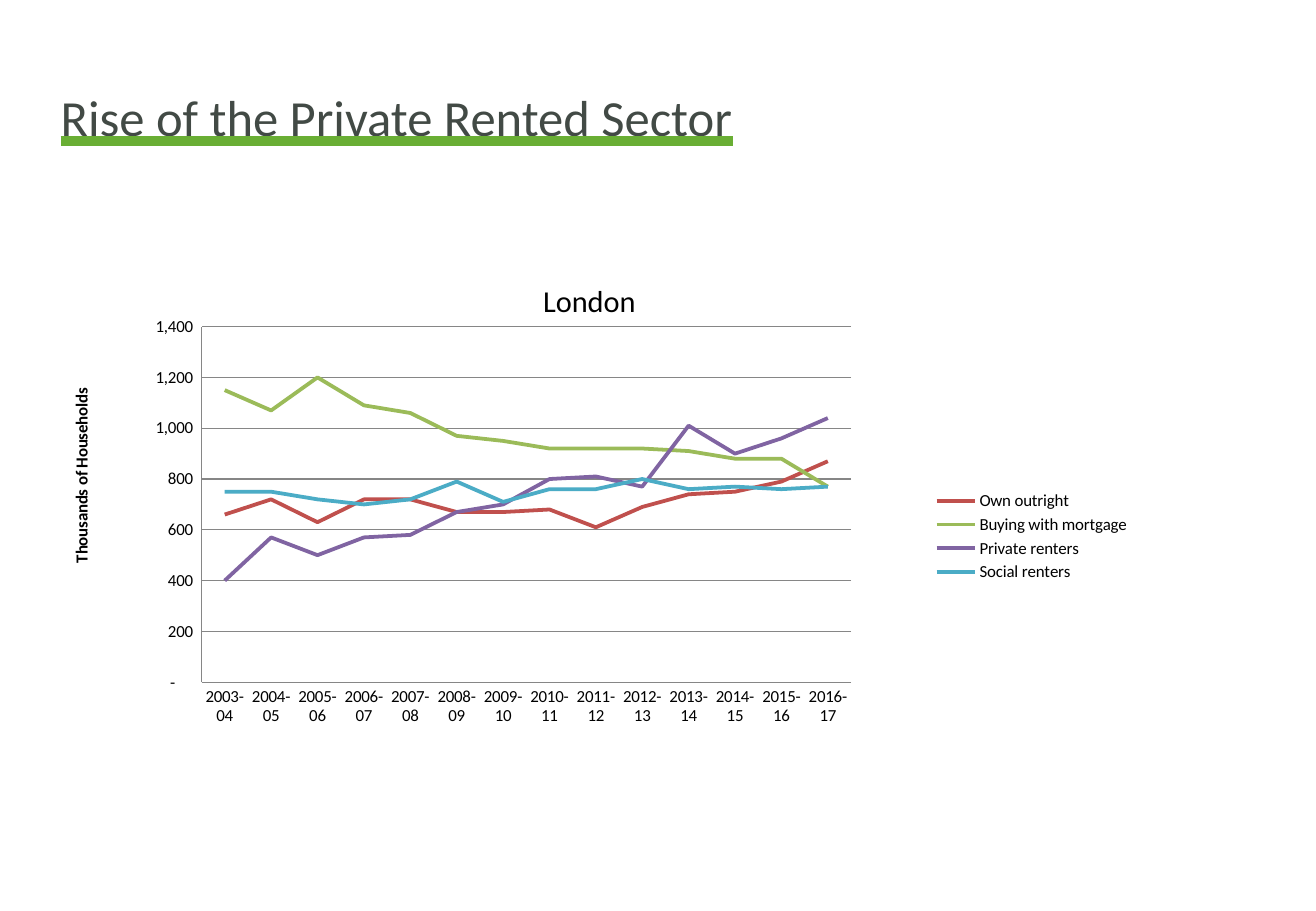
from dataclasses import dataclass

from lxml.etree import SubElement
from pptx import Presentation
from pptx.chart.data import CategoryChartData
from pptx.dml.color import RGBColor
from pptx.enum.chart import XL_CHART_TYPE, XL_LEGEND_POSITION, XL_TICK_MARK
from pptx.enum.text import MSO_ANCHOR, MSO_UNDERLINE
from pptx.oxml import parse_xml
from pptx.oxml.ns import nsdecls, qn
from pptx.util import Inches, Pt

WIDE, HIGH = Inches(10.83), Inches(7.5)
BLACK = RGBColor(0, 0, 0)
SLATE = RGBColor(0x42, 0x4A, 0x45)
LEAF = RGBColor(0x69, 0xAE, 0x34)
GREY = RGBColor(0x86, 0x86, 0x86)
RED = RGBColor(0xC0, 0x50, 0x4D)
GREEN = RGBColor(0x9B, 0xBB, 0x59)
PURPLE = RGBColor(0x80, 0x64, 0xA2)
BLUE = RGBColor(0x4B, 0xAC, 0xC6)
FACE = "Calibri"
COMMAS = '_-* #,##0_-;\\-* #,##0_-;_-* "-"??_-;_-@_-'


@dataclass(frozen=True)
class Box:
    left: float
    top: float
    width: float
    height: float

    def place(self) -> tuple[int, int, int, int]:
        return (int(self.left * WIDE), int(self.top * HIGH),
                int(self.width * WIDE), int(self.height * HIGH))


@dataclass(frozen=True)
class Tenure:
    name: str
    color: RGBColor
    counts: tuple[int, ...]


TENURES = (
    Tenure("Own outright", RED,
           (660, 720, 630, 720, 720, 670, 670, 680, 610, 690, 740, 750, 790, 870)),
    Tenure("Buying with mortgage", GREEN,
           (1150, 1070, 1200, 1090, 1060, 970, 950, 920, 920, 920, 910, 880, 880, 770)),
    Tenure("Private renters", PURPLE,
           (400, 570, 500, 570, 580, 670, 700, 800, 810, 770, 1010, 900, 960, 1040)),
    Tenure("Social renters", BLUE,
           (750, 750, 720, 700, 720, 790, 710, 760, 760, 800, 760, 770, 760, 770)),
)


def set_font(font, size: float, color: RGBColor, bold: bool = False) -> None:
    font.name, font.size, font.bold = FACE, Pt(size), bold
    font.color.rgb = color


def set_layout(layout, **parts) -> None:
    manual = SubElement(layout, qn("c:manualLayout"))
    for tag, val in parts.items():
        SubElement(manual, qn(f"c:{tag}")).set("val", str(val))


def add_title(slide, box: Box, text: str) -> None:
    frame = slide.shapes.add_textbox(*box.place()).text_frame
    frame.word_wrap = True
    frame.vertical_anchor = MSO_ANCHOR.MIDDLE
    frame.text = text
    font = frame.paragraphs[0].runs[0].font
    set_font(font, 30, SLATE)
    font.underline = MSO_UNDERLINE.HEAVY_LINE
    fill = parse_xml(f'<a:uFill {nsdecls("a")}><a:solidFill>'
                     f'<a:srgbClr val="{LEAF}"/></a:solidFill></a:uFill>')
    font.fill._xPr.find(qn("a:solidFill")).addnext(fill)


def label(title, text: str, size: float, bold: bool, x: float, y: float) -> None:
    title.text_frame.text = text
    set_font(title.text_frame.paragraphs[0].runs[0].font, size, BLACK, bold)
    layout = title._element.find(qn("c:layout"))
    if layout is None:
        layout = parse_xml(f'<c:layout {nsdecls("c")}/>')
        title._element.find(qn("c:tx")).addnext(layout)
    set_layout(layout, xMode="edge", yMode="edge", x=x, y=y)


def style_axis(axis) -> None:
    axis.major_tick_mark = axis.minor_tick_mark = XL_TICK_MARK.NONE
    set_font(axis.tick_labels.font, 10, BLACK)
    axis.format.line.color.rgb = GREY
    axis.format.line.width = Pt(0.75)


def add_lines(slide, box: Box, tenures: tuple[Tenure, ...]) -> None:
    data = CategoryChartData()
    data.categories = [f"{y}-{(y + 1) % 100:02d}" for y in range(2003, 2017)]
    for item in tenures:
        data.add_series(item.name, item.counts)
    chart = slide.shapes.add_chart(XL_CHART_TYPE.LINE, *box.place(), data).chart
    set_font(chart.font, 10, BLACK)
    label(chart.chart_title, "London", 18, False, 0.46, 0.05)

    chart.has_legend = True
    chart.legend.position = XL_LEGEND_POSITION.RIGHT
    chart.legend.include_in_layout = False
    set_font(chart.legend.font, 10, BLACK)

    years, counts = chart.category_axis, chart.value_axis
    style_axis(years)
    style_axis(counts)
    counts.minimum_scale, counts.maximum_scale, counts.major_unit = 0, 1400, 200
    counts.tick_labels.number_format = COMMAS
    counts.tick_labels.number_format_is_linked = False
    counts.has_major_gridlines = True
    grid = counts.major_gridlines.format.line
    grid.color.rgb, grid.width = GREY, Pt(0.75)
    label(counts.axis_title, "Thousands of Households", 10, True, 0.04, 0.24)

    plot = chart.plots[0]
    plot.vary_by_categories = False
    for line, item in zip(plot.series, tenures):
        line.smooth = False
        line.format.line.color.rgb = item.color
        line.format.line.width = Pt(2.25)

    area = chart._chartSpace.chart.plotArea
    layout = area.find(qn("c:layout"))
    if layout is None:
        layout = parse_xml(f'<c:layout {nsdecls("c")}/>')
        area.insert(0, layout)
    set_layout(layout, layoutTarget="inner", xMode="edge", yMode="edge",
               x=0.16, y=0.14, w=0.58, h=0.61)


def main() -> None:
    deck = Presentation()
    deck.slide_width, deck.slide_height = WIDE, HIGH
    slide = deck.slides.add_slide(deck.slide_layouts[6])
    add_title(slide, Box(0.037, 0.044, 0.9, 0.167), "Rise of the Private Rented Sector")
    add_lines(slide, Box(0.017, 0.269, 0.851, 0.64), TENURES)
    deck.save("out.pptx")


if __name__ == "__main__":
    main()
